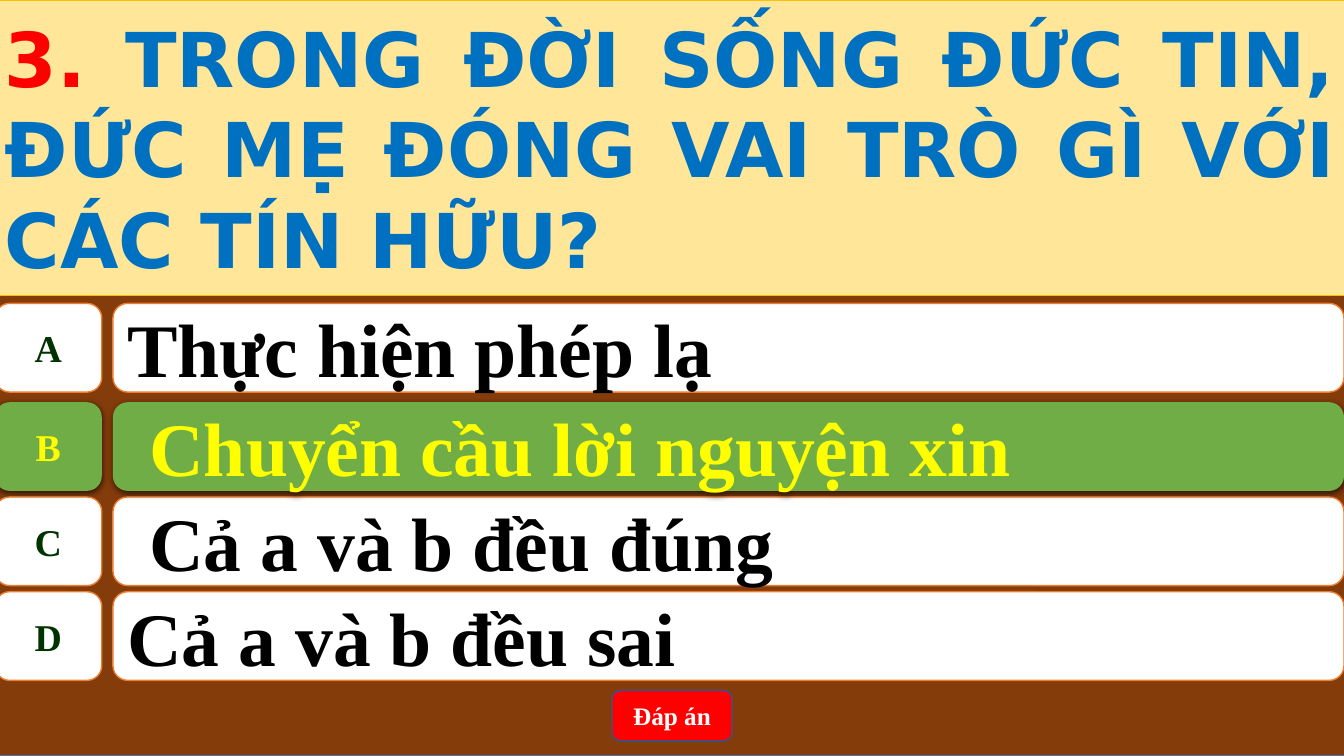
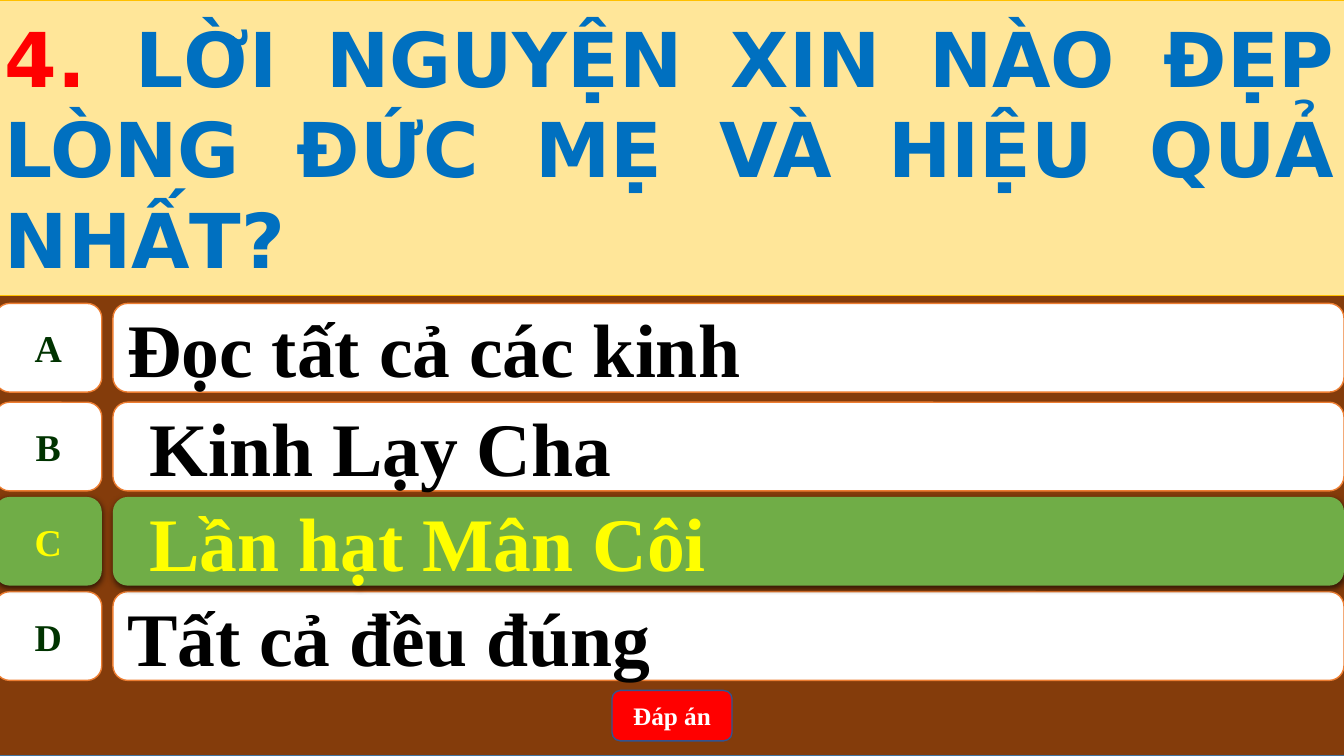
"""Builds two quiz slides, each with the right answer highlighted."""
from dataclasses import dataclass

from lxml import etree
from pptx import Presentation
from pptx import util as u
from pptx.dml.color import RGBColor
from pptx.enum import shapes, text
from pptx.oxml import ns


@dataclass(frozen=True)
class Theme:
    """Colours, fonts and type sizes of the quiz."""
    board: str = "843C0B"
    board_line: str = "43739E"
    band: str = "FFE699"
    band_line: str = "FFC000"
    number: str = "FF0000"
    question: str = "0070C0"
    card: str = "FFFFFF"
    card_line: str = "ED7D31"
    letter: str = "003300"
    answer: str = "000000"
    right_fill: str = "70AD47"
    right_text: str = "FFFF00"
    button: str = "FF0000"
    button_line: str = "325491"
    button_text: str = "FFFFFF"
    question_font: str = "DejaVu Sans"
    body_font: str = "Times New Roman"
    large: int = 54
    medium: int = 27
    small: int = 18


T = Theme()
LEFT, WIDTH = -0.05, 13.39
ROW_HEIGHT = 0.88
ROWS = (("A", 3.01, False), ("B", 3.99, True), ("C", 4.93, True), ("D", 5.87, False))
QUIZ = (
    ("3. ", "TRONG ĐỜI SỐNG ĐỨC TIN, ĐỨC MẸ ĐÓNG VAI TRÒ GÌ VỚI CÁC TÍN HỮU?",
     ("Thực hiện phép lạ", "Chuyển cầu lời nguyện xin",
      "Cả a và b đều đúng", "Cả a và b đều sai"), "B"),
    ("4. ", "LỜI NGUYỆN XIN NÀO ĐẸP LÒNG ĐỨC MẸ VÀ HIỆU QUẢ NHẤT?",
     ("Đọc tất cả các kinh", "Kinh Lạy Cha",
      "Lần hạt Mân Côi", "Tất cả đều đúng"), "C"),
)


def add_box(parent, kind, box, fill, line=None, line_width=1):
    """Add a filled shape, outlined when a line colour is given."""
    sp = parent.shapes.add_shape(kind, *(u.Inches(v) for v in box))
    sp.shadow.inherit = False
    sp.fill.solid()
    sp.fill.fore_color.rgb = RGBColor.from_string(fill)
    if line:
        sp.line.color.rgb = RGBColor.from_string(line)
        sp.line.width = u.Pt(line_width)
    else:
        sp.line.fill.background()
    return sp


def write(sp, runs, size, font, align, wrap=True):
    """Write bold (text, colour) runs into a shape and return the paragraph."""
    tf = sp.text_frame
    tf.word_wrap = wrap
    tf.vertical_anchor = text.MSO_ANCHOR.MIDDLE
    p = tf.paragraphs[0]
    p.alignment = align
    p.font.size, p.font.name, p.font.bold = u.Pt(size), font, True
    for words, colour in runs:
        r = p.add_run()
        r.text = words
        r.font.color.rgb = RGBColor.from_string(colour)
    return p


def add_shadow(sp):
    """Give a shape a soft shadow falling straight down."""
    effects = sp._element.spPr.find(ns.qn("a:effectLst"))
    shadow = etree.SubElement(effects, ns.qn("a:outerShdw"), blurRad=str(u.Pt(4.5)),
                              dist=str(u.Pt(1.5)), dir="5400000", rotWithShape="0")
    colour = etree.SubElement(shadow, ns.qn("a:srgbClr"), val="000000")
    etree.SubElement(colour, ns.qn("a:alpha"), val="63000")


def add_question(s, number, question):
    """Add the question band across the top."""
    band = add_box(s, shapes.MSO_SHAPE.RECTANGLE, (LEFT, 0, WIDTH, 2.93),
                   T.band, T.band_line, 0.5)
    write(band, ((number, T.number), (question, T.question)),
          T.large, T.question_font, text.PP_ALIGN.JUSTIFY)


def add_answer(s, letter, top, indented, answer, right):
    """Add one answer row: a letter card and an answer card."""
    row = s.shapes.add_group_shape()
    fill, line = (T.right_fill, None) if right else (T.card, T.card_line)
    card = add_box(row, shapes.MSO_SHAPE.ROUNDED_RECTANGLE,
                   (1.12, top, 12.21, ROW_HEIGHT), fill, line)
    tag = add_box(row, shapes.MSO_SHAPE.FLOWCHART_ALTERNATE_PROCESS,
                  (LEFT, top, 1.06, ROW_HEIGHT), fill, line)
    p = write(card, ((answer, T.right_text if right else T.answer),),
              T.large, T.body_font, text.PP_ALIGN.LEFT)
    if indented:
        props = p._p.get_or_add_pPr()
        props.set("marL", str(u.Inches(0.5)))
        props.set("indent", str(u.Inches(-0.28)))
    write(tag, ((letter, T.right_text if right else T.letter),),
          T.medium, T.body_font, text.PP_ALIGN.CENTER, wrap=False)
    if right:
        add_shadow(card)
        add_shadow(tag)


def add_button(s):
    """Add the answer button at the foot."""
    button = add_box(s, shapes.MSO_SHAPE.ROUNDED_RECTANGLE, (6.07, 6.85, 1.19, 0.5),
                     T.button, T.button_line)
    write(button, (("Đáp án", T.button_text),),
          T.small, T.body_font, text.PP_ALIGN.CENTER)


def add_quiz_slide(prs, number, question, answers, right):
    """Add one question slide, with the right answer in front."""
    s = prs.slides.add_slide(prs.slide_layouts[6])
    add_box(s, shapes.MSO_SHAPE.RECTANGLE, (LEFT, 0, WIDTH, 7.5), T.board, T.board_line)
    add_question(s, number, question)
    add_button(s)
    rows = [(*row, answer, row[0] == right) for row, answer in zip(ROWS, answers)]
    for row in sorted(rows, key=lambda row: row[-1]):
        add_answer(s, *row)


def main():
    """Build and save the presentation."""
    prs = Presentation()
    prs.slide_width, prs.slide_height = u.Inches(13.33), u.Inches(7.5)
    for item in QUIZ:
        add_quiz_slide(prs, *item)
    prs.save("out.pptx")


if __name__ == "__main__":
    main()
